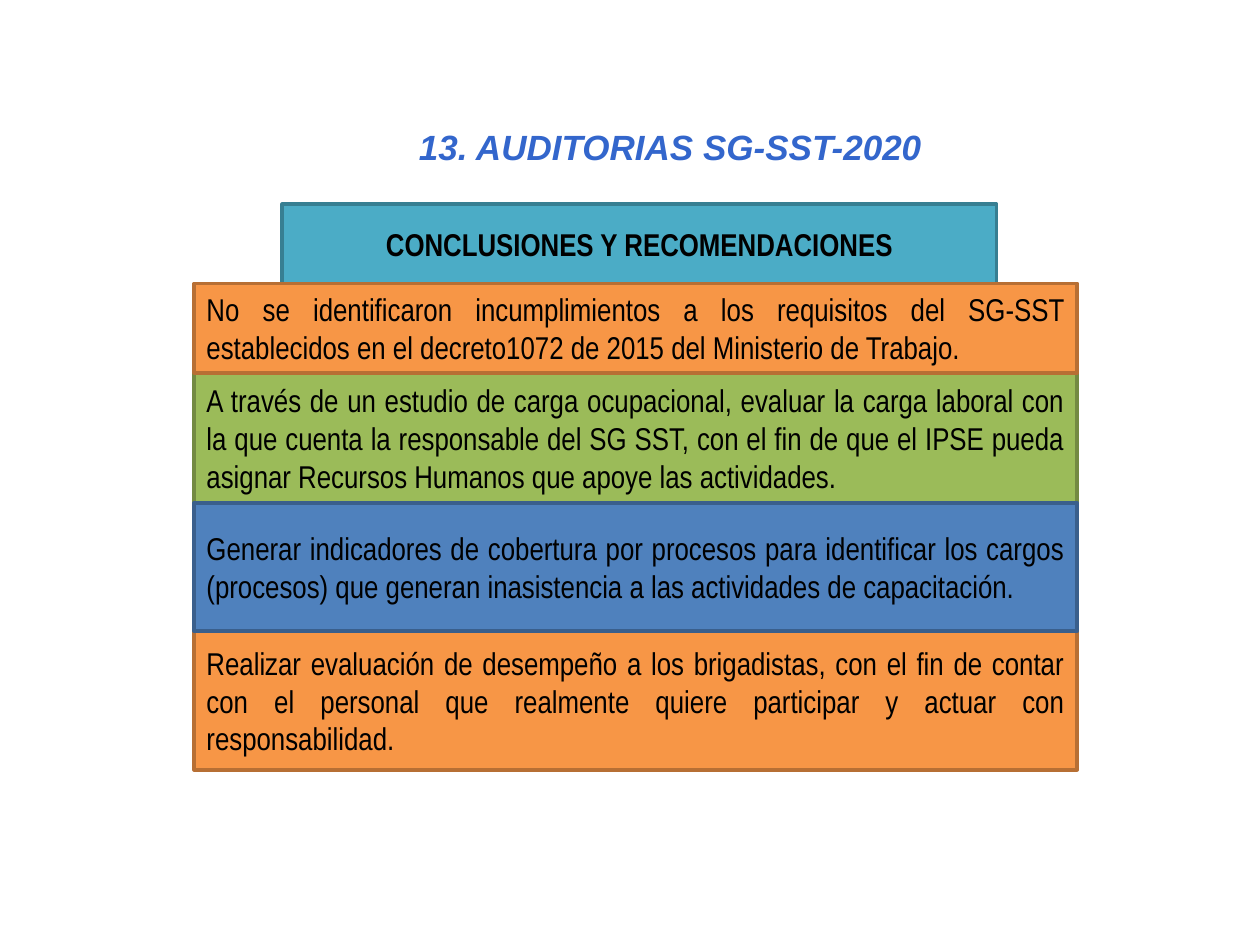
import pptx
import pptx.dml.color
import pptx.enum.shapes
import pptx.enum.text
import pptx.util

Inches, Pt = pptx.util.Inches, pptx.util.Pt
ALIGN = pptx.enum.text.PP_ALIGN
ANCHOR = pptx.enum.text.MSO_ANCHOR

TITLE = "13. AUDITORIAS SG-SST-2020"
HEADING = "CONCLUSIONES Y RECOMENDACIONES"
ORANGE, GREEN = ("F79646", "B76F34"), ("9BBB59", "738A42")
BLUE, TEAL = ("4F81BD", "3A5F8C"), ("4BACC6", "377F92")

# text, (fill, line), height
CONCLUSIONS = [
    ("No se identificaron incumplimientos a los requisitos del SG-SST establecidos "
     "en el decreto1072 de 2015 del Ministerio de Trabajo.", ORANGE, 0.71),
    ("A través de un estudio de carga ocupacional, evaluar la carga laboral con la que "
     "cuenta la responsable del SG SST, con el fin de que el IPSE pueda asignar "
     "Recursos Humanos que apoye las actividades.", GREEN, 1.03),
    ("Generar indicadores de cobertura por procesos para identificar los cargos "
     "(procesos) que generan inasistencia a las actividades de capacitación.", BLUE, 1.02),
    ("Realizar evaluación de desempeño a los brigadistas, con el fin de contar con el "
     "personal que realmente quiere participar y actuar con responsabilidad.", ORANGE, 1.1),
]
BACK_TO_FRONT = (1, 3, 2, 0)  # decides whose border covers a shared edge
ROWS_LEFT, ROWS_TOP, ROWS_WIDTH = 1.54, 2.25, 7.01


def color(hex_string):
    return pptx.dml.color.RGBColor.from_string(hex_string)


def write(shape, text, align, anchor, font_name, size, text_color, bold=False, italic=False):
    frame = shape.text_frame
    frame.word_wrap = True
    frame.vertical_anchor = anchor
    paragraph = frame.paragraphs[0]
    paragraph.text = text
    paragraph.alignment = align
    font = paragraph.font
    font.name, font.size = font_name, Pt(size)
    font.bold, font.italic = bold, italic
    font.color.rgb = color(text_color)


def add_block(slide, box, text, colors, align, bold=False):
    shape = slide.shapes.add_shape(
        pptx.enum.shapes.MSO_SHAPE.RECTANGLE, *map(Inches, box))
    shape.shadow.inherit = False
    fill, line = colors
    shape.fill.solid()
    shape.fill.fore_color.rgb = color(fill)
    shape.line.color.rgb = color(line)
    shape.line.width = Pt(2)
    write(shape, text, align, ANCHOR.MIDDLE, "Arial Narrow", 18, "000000", bold)


def main():
    presentation = pptx.Presentation()
    presentation.slide_width, presentation.slide_height = Inches(10), Inches(7.5)
    slide = presentation.slides.add_slide(presentation.slide_layouts[6])

    title = slide.shapes.add_textbox(*map(Inches, (2.8, 0.99, 5.04, 0.39)))
    write(title, TITLE, ALIGN.CENTER, ANCHOR.BOTTOM, "Arial", 20, "3366CC", True, True)
    add_block(slide, (2.24, 1.62, 5.67, 0.63), HEADING, TEAL, ALIGN.CENTER, bold=True)

    for index in BACK_TO_FRONT:
        text, colors, height = CONCLUSIONS[index]
        top = ROWS_TOP + sum(row[2] for row in CONCLUSIONS[:index])
        add_block(slide, (ROWS_LEFT, top, ROWS_WIDTH, height), text, colors, ALIGN.JUSTIFY)

    presentation.save("out.pptx")


if __name__ == "__main__":
    main()
